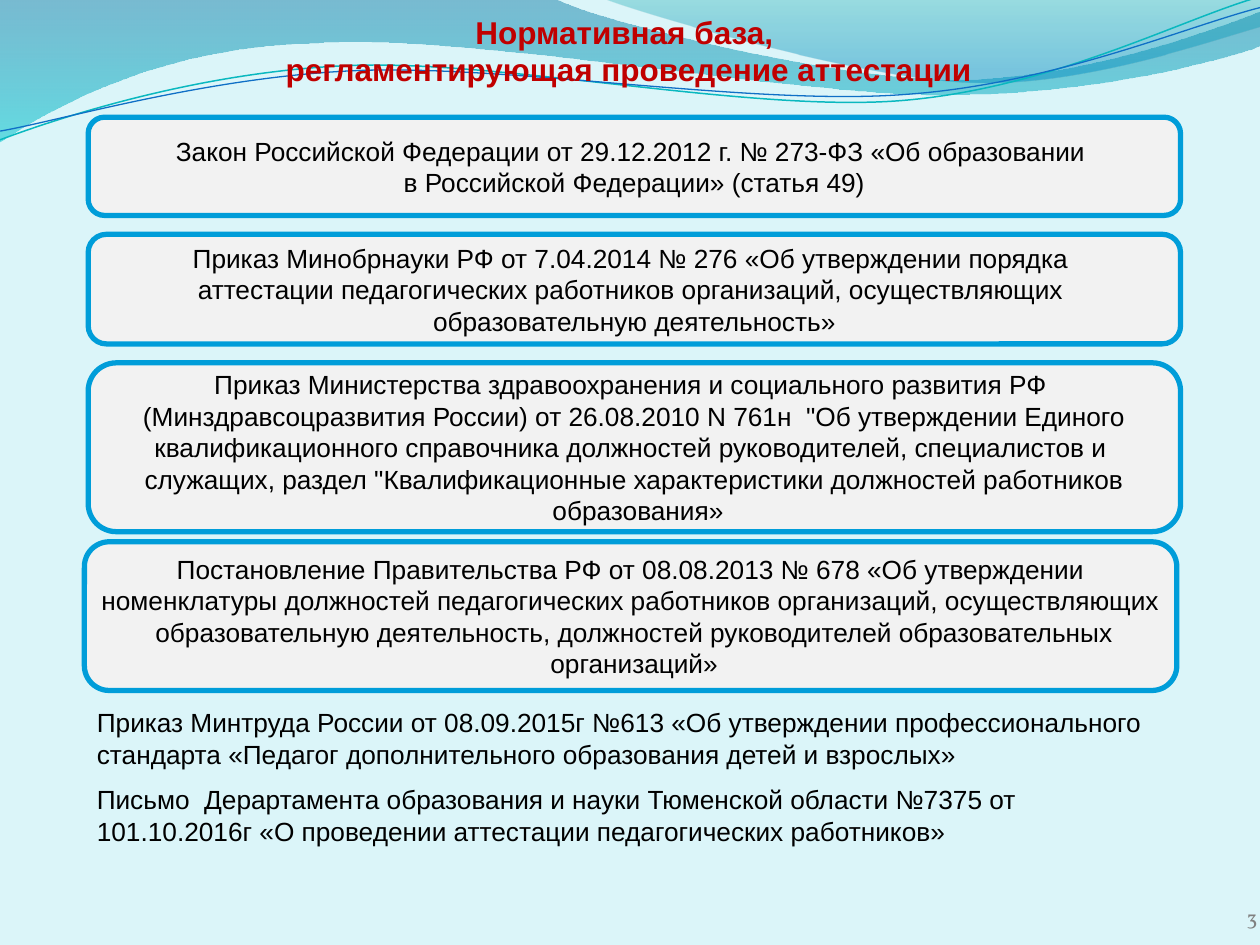
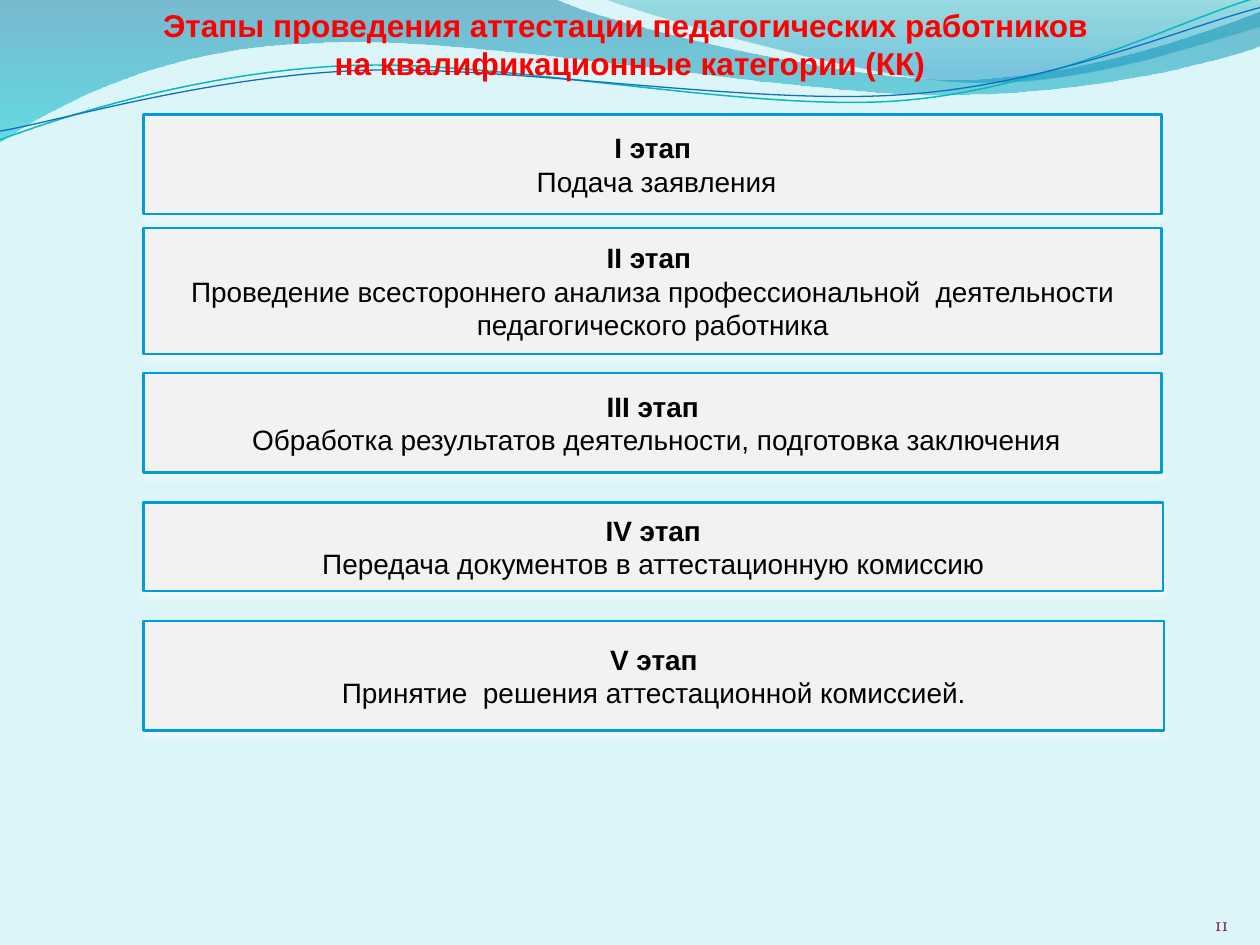
"""Build two slides on the certification of teaching staff: legal basis and stages."""
from dataclasses import dataclass
from math import cos, radians, sin

from lxml.etree import SubElement
from pptx import Presentation
from pptx.dml.color import RGBColor as Color
from pptx.enum.shapes import MSO_SHAPE as Preset
from pptx.enum.text import MSO_ANCHOR as Anchor, MSO_AUTO_SIZE as AutoSize, PP_ALIGN as Align
from pptx.oxml import parse_xml
from pptx.oxml.ns import nsdecls, qn
from pptx.util import Inches, Pt


@dataclass(frozen=True)
class Theme:
    """Colours, fonts and type sizes."""
    background: str = "DBF5F9"
    panel: str = "F2F2F2"
    border: str = "009DD9"
    ink: str = "000000"
    shadow: str = "FFFFFF"
    body_font: str = "Arial"
    number_font: str = "Vollkorn"
    title_size: int = 18
    document_size: int = 15
    stage_size: int = 16


theme = Theme()


def write_text(shape, lines, size, color=theme.ink, font=theme.body_font,
               bold_lines=0, align=Align.CENTER, anchor=Anchor.MIDDLE, wrap=True):
    """Fill a shape with one paragraph per line, the first bold_lines of them bold."""
    frame = shape.text_frame
    frame.text = "\n".join(lines)
    frame.auto_size = AutoSize.NONE
    frame.word_wrap = wrap
    frame.vertical_anchor = anchor
    for index, paragraph in enumerate(frame.paragraphs):
        paragraph.alignment = align
        paragraph.space_before = Pt(0)
        paragraph.font.size = Pt(size)
        paragraph.font.name = font
        paragraph.font.bold = index < bold_lines
        paragraph.font.color.rgb = Color.from_string(color)


def add_panel(slide, preset, left, top, width, height, border_width):
    """Add a grey box with a blue border and no shadow."""
    panel = slide.shapes.add_shape(preset, Inches(left), Inches(top), Inches(width), Inches(height))
    panel.fill.solid()
    panel.fill.fore_color.rgb = Color.from_string(theme.panel)
    panel.line.color.rgb = Color.from_string(theme.border)
    panel.line.width = Pt(border_width)
    panel.shadow.inherit = False
    return panel


presentation = Presentation()
presentation.slide_width, presentation.slide_height = Inches(10), Inches(7.5)
master = presentation.slide_master
master.background.fill.solid()
master.background.fill.fore_color.rgb = Color.from_string(theme.background)
title_only = presentation.slide_layouts[5]

slides = []
for title_lines, title_color, title_box, title_anchor, number, number_box, number_size, number_color in [
    (["Нормативная база, ", "регламентирующая проведение аттестации"], "C00000",
     (-0.01, 0.05, 10, 0.7), Anchor.BOTTOM, "3", (7.65, 6.98, 2.33, 0.4), 12, "808080"),
    (["Этапы проведения аттестации педагогических работников ",
      "на квалификационные категории (КК)"], "FF0000",
     (0, 0, 10, 0.71), Anchor.TOP, "11", (8.92, 7.02, 0.83, 0.4), 10, "832F72"),
]:
    slide = presentation.slides.add_slide(title_only)
    title = slide.shapes.title
    title.left, title.top, title.width, title.height = map(Inches, title_box)
    write_text(title, title_lines, theme.title_size, title_color,
               bold_lines=len(title_lines), anchor=title_anchor)
    page_number = slide.shapes.add_textbox(*map(Inches, number_box))
    write_text(page_number, [number], number_size, number_color, theme.number_font,
               align=Align.RIGHT, anchor=Anchor.BOTTOM)
    frame = page_number.text_frame
    frame.margin_left = frame.margin_top = frame.margin_right = frame.margin_bottom = 0
    slides.append(slide)
documents_slide, stages_slide = slides

waves = [
    ((0, 0), [(4.4, -0.01), (4.76, 0.17, 6.64, 0.63, 7.58, 0.63), (8.53, 0.63, 9.58, 0.26, 10, 0.09),
              (10.01, 0.36), (9.83, 0.44, 8.7, 0.76, 7.46, 0.75), (6.22, 0.75, 3.82, 0.28, 2.57, 0.34),
              (1.29, 0.36, 0.46, 0.83, -0.01, 1.13), (0, 0)],
     [(0, "0074A1", 45), (1, "00C6CF", 55)], None),
    ((4.79, -0.01), [(5.09, 0.11, 6.82, 0.62, 7.69, 0.65), (8.56, 0.69, 9.61, 0.32, 10, 0.21),
                     (10, 0), (4.79, -0.01)],
     [(0, "00A1A9", 30), (0.8, "008BBF", 45)], None),
    ((0, 1.11), [(0.48, 0.93, 1.58, 0.57, 2.77, 0.52), (3.95, 0.47, 5.93, 0.89, 7.13, 0.8),
                 (8.33, 0.71, 9.38, 0.15, 9.98, -0.02)], None, ("0AB8BF", 0.85, 4.99, 0.57)),
    ((0, 1.04), [(0.47, 0.96, 1.64, 0.61, 2.83, 0.56), (4.03, 0.51, 5.97, 0.84, 7.17, 0.75),
                 (8.36, 0.67, 9.41, 0.21, 10, 0.06)], None, ("0F6FC6", 0.75, 4.99, 0.59)),
]
tilt = 2.7
for order, (start, segments, gradient, stroke) in enumerate(waves):
    points = [start] + [segment[i:i + 2] for segment in segments for i in range(0, len(segment), 2)]
    if stroke:
        center_x, center_y = stroke[2:]
        cosine, sine = cos(radians(tilt)), sin(radians(tilt))
        points = [(center_x + (x - center_x) * cosine - (y - center_y) * sine,
                   center_y + (x - center_x) * sine + (y - center_y) * cosine) for x, y in points]
    outline = [(Inches(x), Inches(y)) for x, y in points]
    builder = documents_slide.shapes.build_freeform(*outline[0])
    builder.add_line_segments(outline[1:], close=gradient is not None)
    wave = builder.convert_to_shape()
    wave.shadow.inherit = False

    steps = iter(list(wave.element.iter(qn("a:lnTo"))))
    for segment in segments:
        step = next(steps)
        if len(segment) == 6:
            curve = parse_xml(f'<a:cubicBezTo {nsdecls("a")}/>')
            step.addprevious(curve)
            for control in (step, next(steps), next(steps)):
                curve.append(control[0])
                control.getparent().remove(control)

    if gradient:
        wave.line.fill.background()
        wave.fill.gradient()
        wave.fill.gradient_angle = 270
        for stop, (position, color, _) in zip(wave.fill.gradient_stops, gradient):
            stop.position = position
            stop.color.rgb = Color.from_string(color)
        for color_element, (_, _, opacity) in zip(wave.element.iter(qn("a:srgbClr")), gradient):
            SubElement(color_element, qn("a:alpha"), val=str(opacity * 1000))
    else:
        wave.rotation = 360 - tilt
        wave.fill.background()
        wave.line.color.rgb = Color.from_string(stroke[0])
        wave.line.width = Pt(stroke[1])
    wave.element.nvSpPr.cNvPr.set("id", str(20 + order))
    master.shapes.element.insert(2 + order, wave.element)

documents = [
    (0.7, 0.93, 0.78, ["Закон Российской Федерации от 29.12.2012 г. № 273-ФЗ «Об образовании ",
                       "в Российской Федерации» (статья 49)"]),
    (0.7, 1.86, 0.87, ["Приказ Минобрнауки РФ от 7.04.2014 № 276 «Об утверждении порядка ",
                       "аттестации педагогических работников организаций, осуществляющих ",
                       "образовательную деятельность»"]),
    (0.7, 2.88, 1.34, ["Приказ Министерства здравоохранения и социального развития РФ ",
                       " (Mинздравсоцразвития России) от 26.08.2010 N 761н  \"Об утверждении Единого ",
                       "квалификационного справочника должностей руководителей, специалистов и ",
                       "служащих, раздел \"Квалификационные характеристики должностей работников",
                       " образования»"]),
    (0.67, 4.3, 1.18, [" Постановление Правительства РФ от 08.08.2013 № 678 «Об утверждении ",
                       "номенклатуры должностей педагогических работников организаций, осуществляющих",
                       " образовательную деятельность, должностей руководителей образовательных",
                       " организаций»"]),
]
for left, top, height, lines in documents:
    panel = add_panel(documents_slide, Preset.ROUNDED_RECTANGLE, left, top, 8.67, height, 3)
    write_text(panel, lines, theme.document_size, wrap=False)

for top, width, text in [
    (5.56, 8.58, "Приказ Минтруда России от 08.09.2015г №613 «Об утверждении профессионального "
                 "стандарта «Педагог дополнительного образования детей и взрослых»"),
    (6.17, 8.74, "Письмо  Дерартамента образования и науки Тюменской области №7375 от "
                 "101.10.2016г «О проведении аттестации педагогических работников»"),
]:
    note = documents_slide.shapes.add_textbox(Inches(0.67), Inches(top), Inches(width), Inches(0.61))
    write_text(note, [text], theme.document_size, align=Align.LEFT, anchor=Anchor.TOP)

stages = [
    (0.91, 8.08, 0.79, "I этап", " Подача заявления"),
    (1.81, 8.08, 1, "II этап ",
     "Проведение всестороннего анализа профессиональной  деятельности педагогического работника"),
    (2.96, 8.08, 0.79, "III этап", " Обработка результатов деятельности, подготовка заключения"),
    (3.99, 8.09, 0.7, "IV этап", "Передача документов в аттестационную комиссию"),
    (4.93, 8.1, 0.87, "V этап", "Принятие  решения аттестационной комиссией."),
]
for top, width, height, stage, action in stages:
    panel = add_panel(stages_slide, Preset.RECTANGLE, 1.14, top, width, height, 1.5)
    write_text(panel, [stage, action], theme.stage_size, bold_lines=1)
    panel.element.spPr.find(qn("a:effectLst")).append(parse_xml(
        f'<a:outerShdw {nsdecls("a")} blurRad="{Pt(4.5)}" dist="{Pt(3)}" dir="5400000" rotWithShape="0">'
        f'<a:srgbClr val="{theme.shadow}"><a:alpha val="48000"/></a:srgbClr></a:outerShdw>'))

presentation.save("out.pptx")
